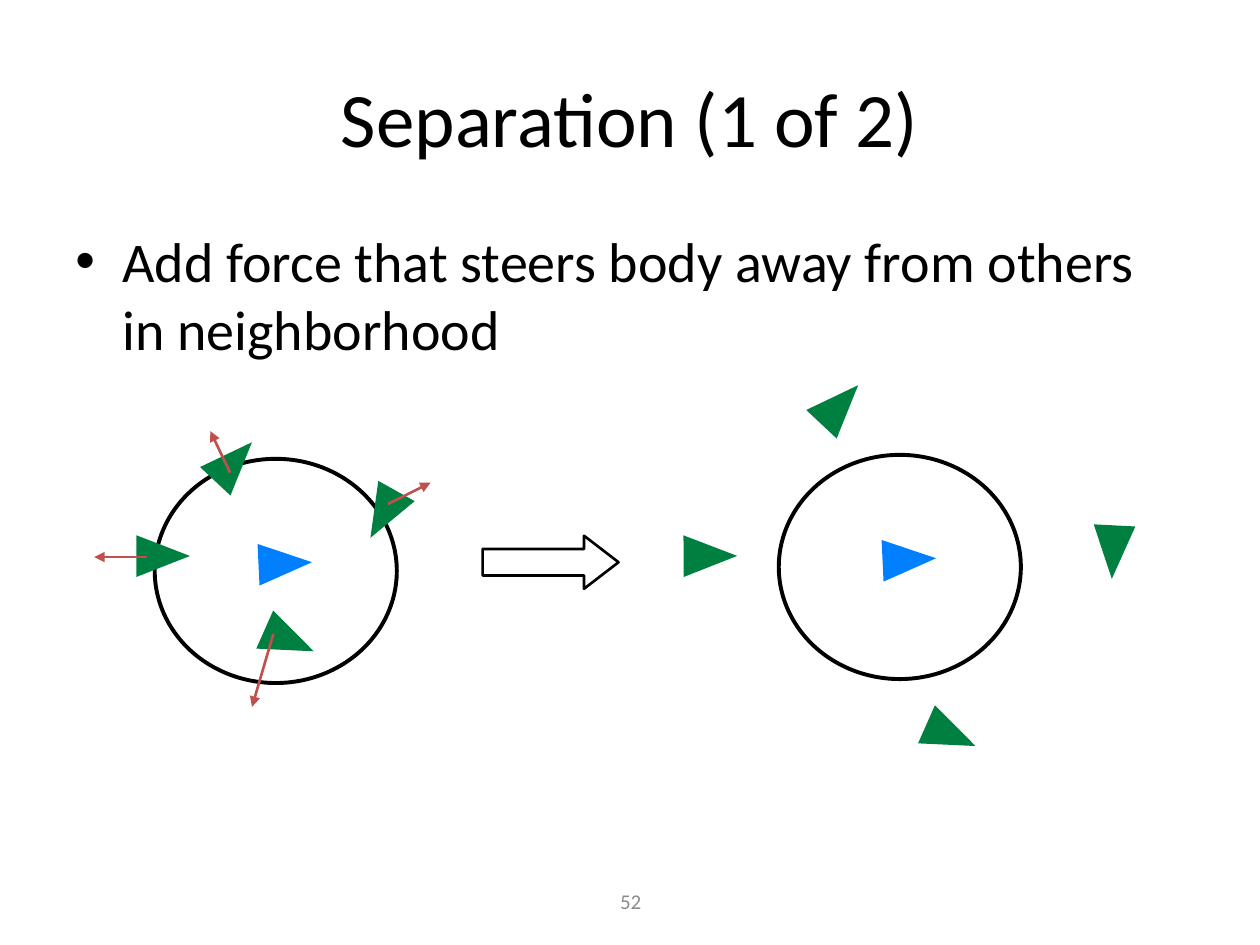
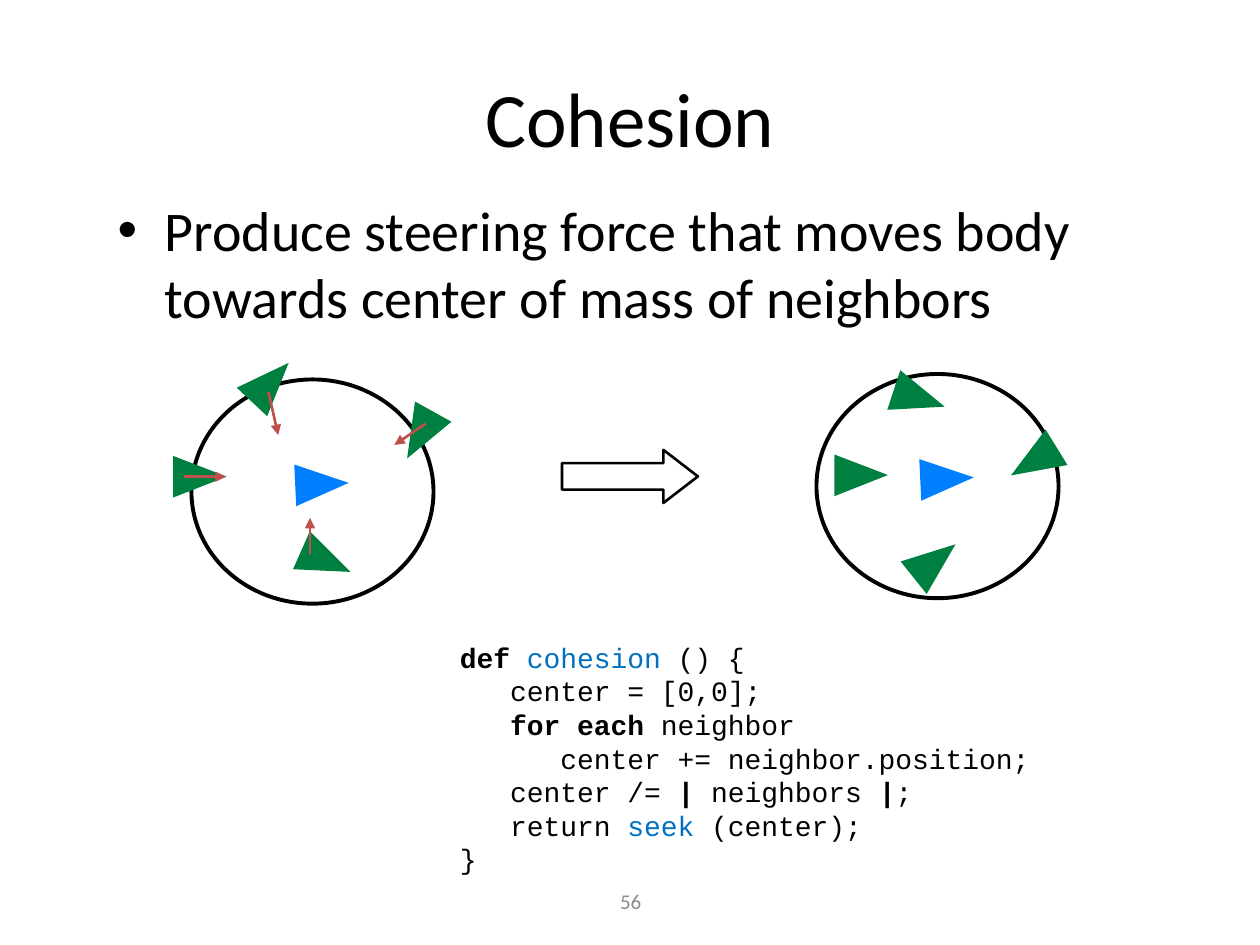
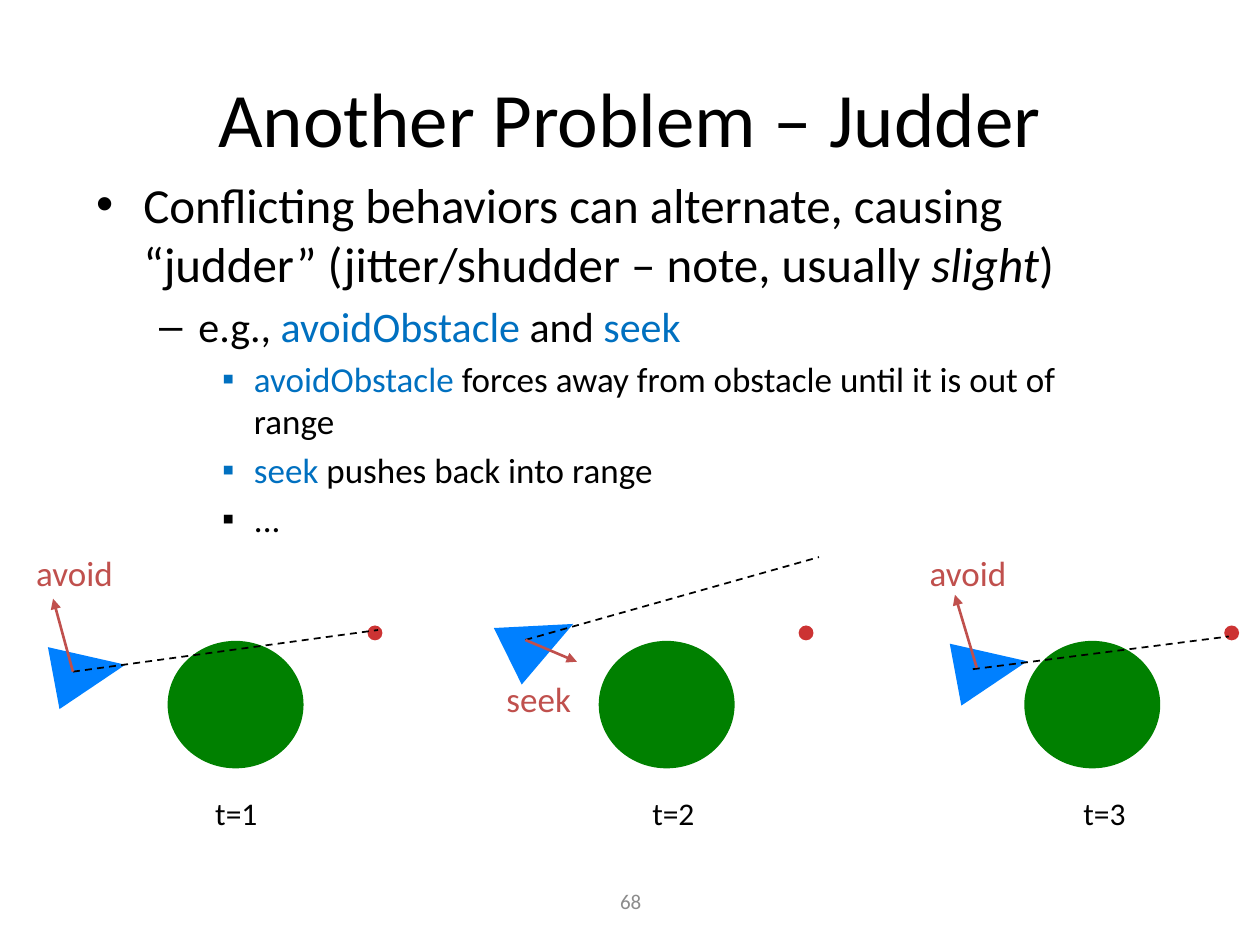
import lxml.etree
import pptx
import pptx.dml.color
import pptx.enum.dml
import pptx.enum.shapes
import pptx.enum.text
import pptx.oxml.ns
import pptx.util

Cm, Pt, qn = pptx.util.Cm, pptx.util.Pt, pptx.oxml.ns.qn
SHAPE = pptx.enum.shapes.MSO_SHAPE
ALIGN = pptx.enum.text.PP_ALIGN
ANCHOR = pptx.enum.text.MSO_ANCHOR

# Shared look
BLACK, GREY, RED, LINK = "000000", "8C8C8C", "C0504D", "0070C0"
NEIGHBOR, SELF, OBSTACLE, TARGET = "008040", "0080FF", "008000", "CC3333"
TITLE_BOX = (1.27, 0.76, 22.86, 3.18)
NUMBER_BOX = (8.69, 17.65, 8.05, 1.02)
BULLETS = [("•", 0.95, 0.95), ("–", 2.06, 0.79), ("▪", 3.18, 0.64)]  # sign, left, hanging

# Flocking: places inside a scene count from the corner of its circle
CIRCLE_SIZE, BOID_SIZE, ARROW_SIZE = (4.88, 4.52), (0.84, 1.08), (2.74, 1.07)
SELF_BOID = (2.21, 1.57, 87.3)
NEIGHBORS_BEFORE = [(1.17, -0.48, 43.2), (2.29, 3.12, 113.9),
                    (-0.25, 1.42, 89.9), (4.19, 0.58, 209.1)]
FLOCKING = [
    {
        "title": "Separation (1 of 2)", "number": "52",
        "body": (1.27, 4.45, 22.86, 12.57),
        "point": "Add force that steers body away from others in neighborhood",
        "before": (3.12, 9.25), "arrow": (9.73, 10.8), "after": (15.7, 9.17),
        "forces": [(-0.15, 1.98, -1.22, 1.98), (1.52, 0.28, 1.12, -0.56),
                   (4.7, 0.91, 5.56, 0.48), (2.39, 3.53, 1.96, 5)],
        "neighbors_after": [(0.81, -1.55, 43.2), (3.05, 5.11, 113.9),
                            (-1.8, 1.5, 89.7), (6.32, 1.42, 182.9)],
    },
    {
        "title": "Cohesion", "number": "56",
        "body": (2.12, 3.81, 21.59, 2.96),
        "point": "Produce steering force that moves body towards center of mass of neighbors",
        "before": (3.86, 7.65), "arrow": (11.33, 9.07), "after": (16.46, 7.54),
        "forces": [(-0.15, 1.96, 0.69, 1.96), (1.55, 0.25, 1.75, 1.12),
                   (4.72, 0.89, 4.09, 1.32), (2.39, 3.51, 2.39, 2.79)],
        "neighbors_after": [(1.65, -0.05, 108.1), (1.96, 3.23, 51.4),
                            (0.48, 1.5, 89.7), (3.96, 1.22, 238.3)],
    },
]

# Text runs are (text, style) pairs
COHESION_BOX = (9.02, 12.75, 12.17, 5.06)
COHESION_CODE = [
    [("def ", "bold"), ("cohesion", "link"), (" () {", "")],
    [("   center = [0,0];", "")],
    [("   ", ""), ("for each ", "bold"), ("neighbor", "")],
    [("      center += neighbor.position;", "")],
    [("   center /= ", ""), ("| ", "bold"), ("neighbors ", ""), ("|", "bold"), (";", "")],
    [("   return ", ""), ("seek ", "link"), ("(center);", "")],
    [("}", "")],
]

JUDDER_TITLE, JUDDER_NUMBER = "Another Problem – Judder", "68"
JUDDER_BODY = (1.69, 3.39, 21.59, 8.05)
JUDDER_POINTS = [  # level, size, runs
    (0, 28, [("Conflicting behaviors can alternate, causing “judder” "
              "(jitter/shudder – note, usually ", ""), ("slight", "italic"), (")", "")]),
    (1, 24, [("e.g., ", ""), ("avoidObstacle", "link"), (" and ", ""), ("seek", "link")]),
    (2, 20, [("avoidObstacle ", "link"),
             ("forces away from obstacle until it is out of range", "")]),
    (2, 20, [("seek", "link"), (" pushes back into range", "")]),
    (2, 20, [("...", "")]),
]
OBSTACLE_TOP, OBSTACLE_SIZE = 12.92, (2.74, 2.57)
TARGET_OFFSET, TARGET_SIZE = (4.03, -0.31), (0.3, 0.3)
VEHICLE_SIZE = (1.27, 1.47)
TIME_TOP, TIME_SIZE, FORCE_LABEL_SIZE = 15.88, (1.42, 1.02), (2.2, 1.09)
STEPS = [
    {"time": "t=1", "time_left": 4.09, "obstacle_left": 3.38,
     "vehicle": (1.17, 12.8, 79.4), "sight": (1.47, 13.54, 7.62, 12.7),
     "force": (1.47, 13.54, 1.07, 12.07), "label": ("avoid", 0.48, 11)},
    {"time": "t=2", "time_left": 12.9, "obstacle_left": 12.07,
     "vehicle": (10.26, 12.17, 63.7), "sight": (10.59, 12.9, 16.51, 11.23),
     "force": (10.59, 12.9, 11.63, 13.34), "label": ("seek", 9.96, 13.54)},
    {"time": "t=3", "time_left": 21.59, "obstacle_left": 20.65,
     "vehicle": (19.35, 12.73, 79.4), "sight": (19.61, 13.49, 24.77, 12.83),
     "force": (19.69, 13.46, 19.25, 11.99), "label": ("avoid", 18.49, 11)},
]


def rgb(color):
    return pptx.dml.color.RGBColor.from_string(color)


def cm(lengths):
    return [Cm(length) for length in lengths]


# Text
def write(paragraph, runs, size, color=BLACK, face="Calibri"):
    for text, style in runs:
        run = paragraph.add_run()
        run.text = text
        run.font.name = face
        run.font.size = Pt(size)
        run.font.bold = style == "bold"
        run.font.italic = style == "italic"
        run.font.color.rgb = rgb(LINK if style == "link" else color)


def add_text(slide, box, lines, size, color=BLACK, face="Calibri", align=ALIGN.LEFT):
    frame = slide.shapes.add_textbox(*cm(box)).text_frame
    frame.word_wrap = False
    frame.vertical_anchor = ANCHOR.MIDDLE
    for index, runs in enumerate(lines):
        paragraph = frame.add_paragraph() if index else frame.paragraphs[0]
        paragraph.alignment = align
        write(paragraph, runs, size, color, face)


def add_points(slide, box, points):
    frame = slide.shapes.add_textbox(*cm(box)).text_frame
    frame.word_wrap = True
    for index, (level, size, runs) in enumerate(points):
        paragraph = frame.add_paragraph() if index else frame.paragraphs[0]
        paragraph.level = level
        if index:
            paragraph.space_before = Pt(size * 0.2)
        sign, left, hanging = BULLETS[level]
        properties = paragraph._p.get_or_add_pPr()
        properties.set("marL", str(Cm(left)))
        properties.set("indent", str(-Cm(hanging)))
        lxml.etree.SubElement(properties, qn("a:buFont"), typeface="Arial")
        lxml.etree.SubElement(properties, qn("a:buChar"), char=sign)
        write(paragraph, runs, size)


def add_slide(deck, title, number):
    slide = deck.slides.add_slide(deck.slide_layouts[5])
    heading = slide.shapes.title
    heading.left, heading.top, heading.width, heading.height = cm(TITLE_BOX)
    heading.text_frame.vertical_anchor = ANCHOR.MIDDLE
    paragraph = heading.text_frame.paragraphs[0]
    paragraph.alignment = ALIGN.CENTER
    write(paragraph, [(title, "")], 44)
    add_text(slide, NUMBER_BOX, [[(number, "")]], 12, GREY, align=ALIGN.CENTER)
    return slide


# Drawing
def add_figure(slide, preset, corner, size, fill=None, outline=None, turn=0):
    figure = slide.shapes.add_shape(preset, *cm((*corner, *size)))
    figure.shadow.inherit = False
    figure.rotation = turn
    if fill:
        figure.fill.solid()
        figure.fill.fore_color.rgb = rgb(fill)
    else:
        figure.fill.background()
    if outline:
        figure.line.color.rgb = rgb(BLACK)
        figure.line.width = Pt(outline)
    else:
        figure.line.fill.background()
    return figure


def add_line(slide, ends, color, width, dashed=False):
    """Draw a dashed line, or a solid one with an arrowhead."""
    line = slide.shapes.add_connector(pptx.enum.shapes.MSO_CONNECTOR.STRAIGHT, *cm(ends))
    line.line.color.rgb = rgb(color)
    line.line.width = Pt(width)
    properties = line.element.spPr
    if dashed:
        line.line.dash_style = pptx.enum.dml.MSO_LINE.DASH
    else:
        lxml.etree.SubElement(properties.find(qn("a:ln")), qn("a:tailEnd"), type="triangle")
    lxml.etree.SubElement(properties, qn("a:effectLst"))


def add_scene(slide, corner, neighbors, forces=()):
    x, y = corner
    add_figure(slide, SHAPE.OVAL, corner, CIRCLE_SIZE, outline=2.25)
    boids = [(SELF_BOID, SELF)] + [(boid, NEIGHBOR) for boid in neighbors]
    for (dx, dy, turn), color in boids:
        add_figure(slide, SHAPE.ISOSCELES_TRIANGLE, (x + dx, y + dy), BOID_SIZE, color, turn=turn)
    for x1, y1, x2, y2 in forces:
        add_line(slide, (x + x1, y + y1, x + x2, y + y2), RED, 1.5)


def add_flocking(deck, behavior):
    slide = add_slide(deck, behavior["title"], behavior["number"])
    add_points(slide, behavior["body"], [(0, 32, [(behavior["point"], "")])])
    add_scene(slide, behavior["after"], behavior["neighbors_after"])
    add_scene(slide, behavior["before"], NEIGHBORS_BEFORE, behavior["forces"])
    arrow = add_figure(slide, SHAPE.RIGHT_ARROW, behavior["arrow"], ARROW_SIZE, outline=1.5)
    arrow.adjustments[1] = 0.65
    return slide


def add_step(slide, step):
    left = step["obstacle_left"]
    target = (left + TARGET_OFFSET[0], OBSTACLE_TOP + TARGET_OFFSET[1])
    *vehicle, turn = step["vehicle"]
    label, *label_corner = step["label"]
    add_figure(slide, SHAPE.ISOSCELES_TRIANGLE, vehicle, VEHICLE_SIZE, SELF, turn=turn)
    add_figure(slide, SHAPE.OVAL, (left, OBSTACLE_TOP), OBSTACLE_SIZE, OBSTACLE)
    add_figure(slide, SHAPE.OVAL, target, TARGET_SIZE, TARGET)
    add_line(slide, step["sight"], BLACK, 1, dashed=True)
    add_line(slide, step["force"], RED, 1.5)
    add_text(slide, (step["time_left"], TIME_TOP, *TIME_SIZE), [[(step["time"], "")]], 18)
    add_text(slide, (*label_corner, *FORCE_LABEL_SIZE), [[(label, "")]], 20, RED)


def main():
    deck = pptx.Presentation()
    deck.slide_width, deck.slide_height = Cm(25.4), Cm(19.05)

    separation, cohesion = [add_flocking(deck, behavior) for behavior in FLOCKING]
    add_text(cohesion, COHESION_BOX, COHESION_CODE, 16, face="Courier New")

    judder = add_slide(deck, JUDDER_TITLE, JUDDER_NUMBER)
    add_points(judder, JUDDER_BODY, JUDDER_POINTS)
    for step in STEPS:
        add_step(judder, step)

    deck.save("out.pptx")


if __name__ == "__main__":
    main()
